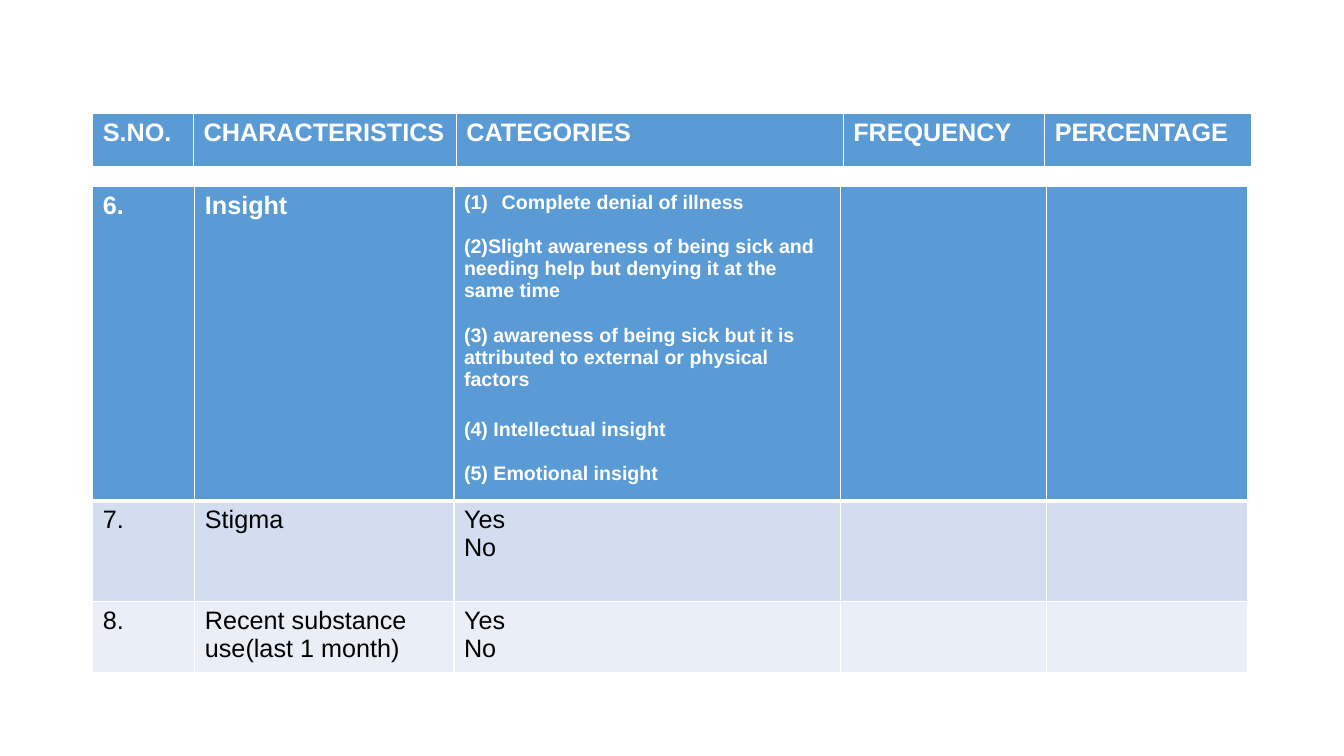
from pptx import Presentation
from pptx.dml.color import RGBColor
from pptx.oxml import parse_xml
from pptx.oxml.ns import nsdecls
from pptx.util import Cm, Pt

# Content: a cell is a list of paragraphs
HEADINGS = [[["S.NO."], ["CHARACTERISTICS"], ["CATEGORIES"], ["FREQUENCY"], ["PERCENTAGE"]]]
INSIGHT_LEVELS = [
    "Complete denial of illness",
    "(2)Slight awareness of being sick and needing help but denying it at the same time",
    "(3) awareness of being sick but it is attributed to external or physical factors",
    "(4) Intellectual insight",
    "(5) Emotional insight",
]
ANSWERS = ["Yes", "No"]
ITEMS = [
    [["6."], ["Insight"], INSIGHT_LEVELS, [], []],
    [["7."], ["Stigma"], ANSWERS, [], []],
    [["8."], ["Recent substance use(last 1 month)"], ANSWERS, [], []],
]

# Layout in centimetres
LEFT = 2.34
HEADING_TOP, HEADING_COLS, HEADING_ROWS = 2.87, [2.54, 6.62, 9.75, 5.08, 5.21], [1.35]
ITEM_TOP, ITEM_COLS, ITEM_ROWS = 4.7, [2.57, 6.53, 9.75, 5.18, 5.08], [7.92, 2.54, 1.78]
LEVEL_GAPS = [0, 16, 16, 20, 16]  # points before each insight level

THEME = {
    "font": "Arial",
    "size": 18,
    "level_size": 14,
    "fills": ["5B9BD5", "D2DEEF", "EAEFF7"],
    "head_text": "FFFFFF",
    "body_text": "000000",
    "border": "FFFFFF",
    "thin": 1,
    "thick": 3,
}


def set_borders(cell, row):
    """Thin lines all round, with a thick one under the first row."""
    widths = {
        "L": THEME["thin"],
        "R": THEME["thin"],
        "T": THEME["thick"] if row == 1 else THEME["thin"],
        "B": THEME["thick"] if row == 0 else THEME["thin"],
    }
    tc_pr = cell._tc.get_or_add_tcPr()
    for i, (side, width) in enumerate(widths.items()):
        tc_pr.insert(i, parse_xml(
            f'<a:ln{side} {nsdecls("a")} w="{Pt(width)}"><a:solidFill>'
            f'<a:srgbClr val="{THEME["border"]}"/></a:solidFill></a:ln{side}>'))


def number_paragraph(p):
    p_pr = p._p.get_or_add_pPr()
    p_pr.set("marL", str(Cm(0.95)))
    p_pr.set("indent", str(Cm(-0.95)))
    p_pr.append(parse_xml(f'<a:buAutoNum {nsdecls("a")} type="arabicParenBoth"/>'))


def fill_cell(cell, lines, row):
    cell.fill.solid()
    cell.fill.fore_color.rgb = RGBColor.from_string(THEME["fills"][row])
    set_borders(cell, row)
    tf = cell.text_frame
    is_levels = lines is INSIGHT_LEVELS
    for i, line in enumerate(lines):
        p = tf.add_paragraph() if i else tf.paragraphs[0]
        if is_levels:
            p.space_before = Pt(LEVEL_GAPS[i])
            if i == 0:
                number_paragraph(p)
        r = p.add_run()
        r.text = line
        r.font.name = THEME["font"]
        r.font.size = Pt(THEME["level_size" if is_levels else "size"])
        r.font.bold = row == 0
        r.font.color.rgb = RGBColor.from_string(THEME["body_text" if row else "head_text"])


def add_grid(slide, top, cols, heights, rows):
    table = slide.shapes.add_table(len(rows), len(cols), Cm(LEFT), Cm(top),
                                   Cm(sum(cols)), Cm(sum(heights))).table
    for column, width in zip(table.columns, cols):
        column.width = Cm(width)
    for i, (height, cells) in enumerate(zip(heights, rows)):
        table.rows[i].height = Cm(height)
        for j, lines in enumerate(cells):
            fill_cell(table.cell(i, j), lines, i)


def main():
    prs = Presentation()
    prs.slide_width, prs.slide_height = Cm(33.87), Cm(19.05)
    slide = prs.slides.add_slide(prs.slide_layouts[6])

    # Questionnaire items, then the headings above them
    add_grid(slide, ITEM_TOP, ITEM_COLS, ITEM_ROWS, ITEMS)
    add_grid(slide, HEADING_TOP, HEADING_COLS, HEADING_ROWS, HEADINGS)
    prs.save("out.pptx")


if __name__ == "__main__":
    main()
